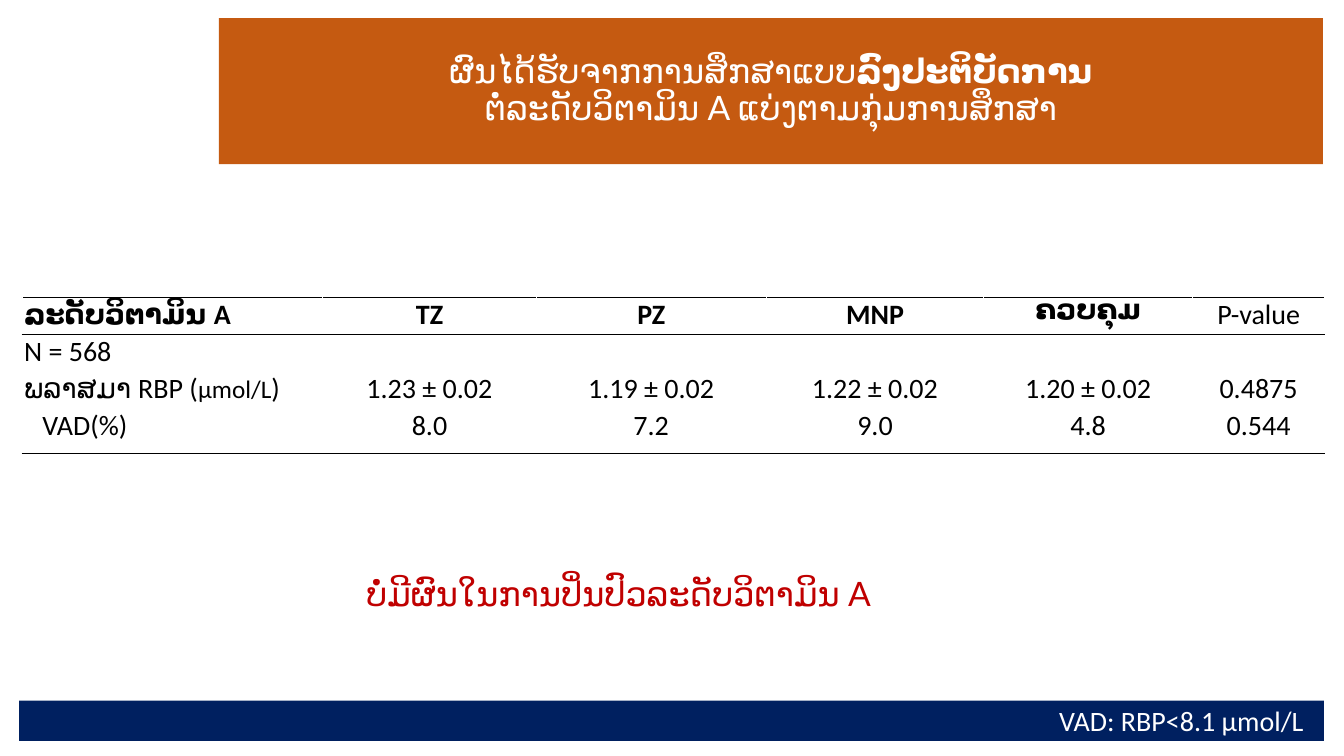
from dataclasses import dataclass

import lxml.etree
import pptx
import pptx.dml.color
import pptx.enum.shapes
import pptx.enum.text
import pptx.oxml.ns
import pptx.util

ALIGN = pptx.enum.text.PP_ALIGN
MIDDLE = pptx.enum.text.MSO_ANCHOR.MIDDLE
RECTANGLE = pptx.enum.shapes.MSO_SHAPE.RECTANGLE


@dataclass
class Theme:
    orange: str = "C55A11"
    navy: str = "002060"
    red: str = "C00000"
    black: str = "000000"
    white: str = "FFFFFF"
    heading_font: str = "Lato"
    body_font: str = "Calibri"
    heading_size: int = 24
    body_size: int = 20
    unit_size: int = 18


def colour(code):
    return pptx.dml.color.RGBColor.from_string(code)


class Page:
    """One slide; positions and sizes are percentages of its width and height."""

    def __init__(self, deck, theme):
        self.deck = deck
        self.theme = theme
        self.slide = deck.slides.add_slide(deck.slide_layouts[6])

    def across(self, share):
        return round(self.deck.slide_width * share / 100)

    def down(self, share):
        return round(self.deck.slide_height * share / 100)

    def place(self, left, top, width, height):
        return self.across(left), self.down(top), self.across(width), self.down(height)

    def fill_para(self, para, spans, font, size, ink, align):
        """Add spans of (text, style); a line feed in the text breaks the line."""
        for text, style in spans:
            for number, line in enumerate(text.split("\n")):
                if number:
                    para.add_line_break()
                if line:
                    span = para.add_run()
                    span.text = line
                    span.font.bold = style.get("bold")
                    span.font.size = style.get("size")
        para.alignment = align
        para.font.name = font
        para.font.size = pptx.util.Pt(size)
        para.font.color.rgb = colour(ink)

    def bar(self, place, fill, spans, font, size, align, spacing=1.0):
        box = self.slide.shapes.add_shape(RECTANGLE, *self.place(*place))
        box.shadow.inherit = False
        box.fill.solid()
        box.fill.fore_color.rgb = colour(fill)
        box.line.fill.background()
        frame = box.text_frame
        frame.word_wrap = True
        frame.vertical_anchor = MIDDLE
        para = frame.paragraphs[0]
        para.line_spacing = spacing
        self.fill_para(para, spans, font, size, self.theme.white, align)
        return frame

    def note(self, place, text):
        frame = self.slide.shapes.add_textbox(*self.place(*place)).text_frame
        frame.word_wrap = True
        self.fill_para(frame.paragraphs[0], [(text, {})], self.theme.heading_font,
                       self.theme.heading_size, self.theme.red, ALIGN.CENTER)

    def rule(self, cell, side):
        """Draw a thin line on side T or B of a cell."""
        name = pptx.oxml.ns.qn("a:ln" + side)
        line = lxml.etree.SubElement(cell._tc.get_or_add_tcPr(), name, w="12700")
        fill = lxml.etree.SubElement(line, pptx.oxml.ns.qn("a:solidFill"))
        lxml.etree.SubElement(fill, pptx.oxml.ns.qn("a:srgbClr"), val=self.theme.black)

    def table(self, left, top, widths, heights, rows, indents):
        theme = self.theme
        place = self.place(left, top, sum(widths), sum(heights))
        table = self.slide.shapes.add_table(len(rows), len(widths), *place).table
        table.first_row = table.horz_banding = False
        for column, width in zip(table.columns, widths):
            column.width = self.across(width)
        for row, height in zip(table.rows, heights):
            row.height = self.down(height)
        last = len(rows) - 1
        for y, row in enumerate(rows):
            for x, spans in enumerate(row):
                cell = table.cell(y, x)
                cell.margin_top = cell.margin_bottom = 0
                cell.margin_left = cell.margin_right = pptx.util.Inches(0.02)
                if x == 0:
                    cell.margin_left = pptx.util.Inches(indents[y])
                if y < 2:
                    self.rule(cell, "T")
                if y in (0, last):
                    self.rule(cell, "B")
                cell.fill.solid()
                cell.fill.fore_color.rgb = colour(theme.white)
                if isinstance(spans, str):
                    spans = [(spans, {})]
                para = cell.text_frame.paragraphs[0]
                self.fill_para(para, spans, theme.body_font, theme.body_size,
                               theme.black, ALIGN.CENTER if x else ALIGN.LEFT)


def main():
    deck = pptx.Presentation()
    deck.slide_width = pptx.util.Inches(13.33)
    deck.slide_height = pptx.util.Inches(7.5)
    theme = Theme()
    page = Page(deck, theme)
    bold = {"bold": True}

    page.bar((16.28, 2.4, 82.15, 19.33), theme.orange,
             [("ຜົນໄດ້ຮັບຈາກການສຶກສາແບບ", {}),
              ("ລົງປະຕິບັດການ", bold),
              ("\nຕໍ່ລະດັບວິຕາມິນ A ແບ່ງຕາມກຸ່ມການສຶກສາ", {})],
             theme.heading_font, theme.heading_size, ALIGN.CENTER, 0.9)

    groups = ["ລະດັບວິຕາມິນ A", "TZ", "PZ", "MNP", "ຄວບຄຸມ"]
    unit = {"size": pptx.util.Pt(theme.unit_size)}
    plasma = [("ພລາສມາ RBP (", {}), ("µmol/L", unit), (")", {})]
    rows = [
        [[(group, bold)] for group in groups] + ["P-value"],
        ["N = 568"] + [""] * 5,
        [plasma, "1.23 ± 0.02", "1.19 ± 0.02", "1.22 ± 0.02", "1.20 ± 0.02", "0.4875"],
        ["VAD(%)", "8.0", "7.2", "9.0", "4.8", "0.544"],
    ]
    page.table(1.65, 39.33, [22.36, 15.9, 17.1, 16.2, 15.53, 9.83],
               [4.93, 4.93, 4.93, 5.87], rows, [0.02, 0.02, 0.02, 0.2])

    footer = page.bar((1.43, 92.67, 97.07, 5.33), theme.navy,
                      [("VAD: RBP<8.1 µmol/L", {})],
                      theme.body_font, theme.body_size, ALIGN.RIGHT)
    footer.margin_right = pptx.util.Inches(0.2)

    page.note((1.65, 75.07, 88.75, 6.67), "ບໍ່ມີຜົນໃນການປິ່ນປົວລະດັບວິຕາມິນ A")
    deck.save("out.pptx")


if __name__ == "__main__":
    main()
